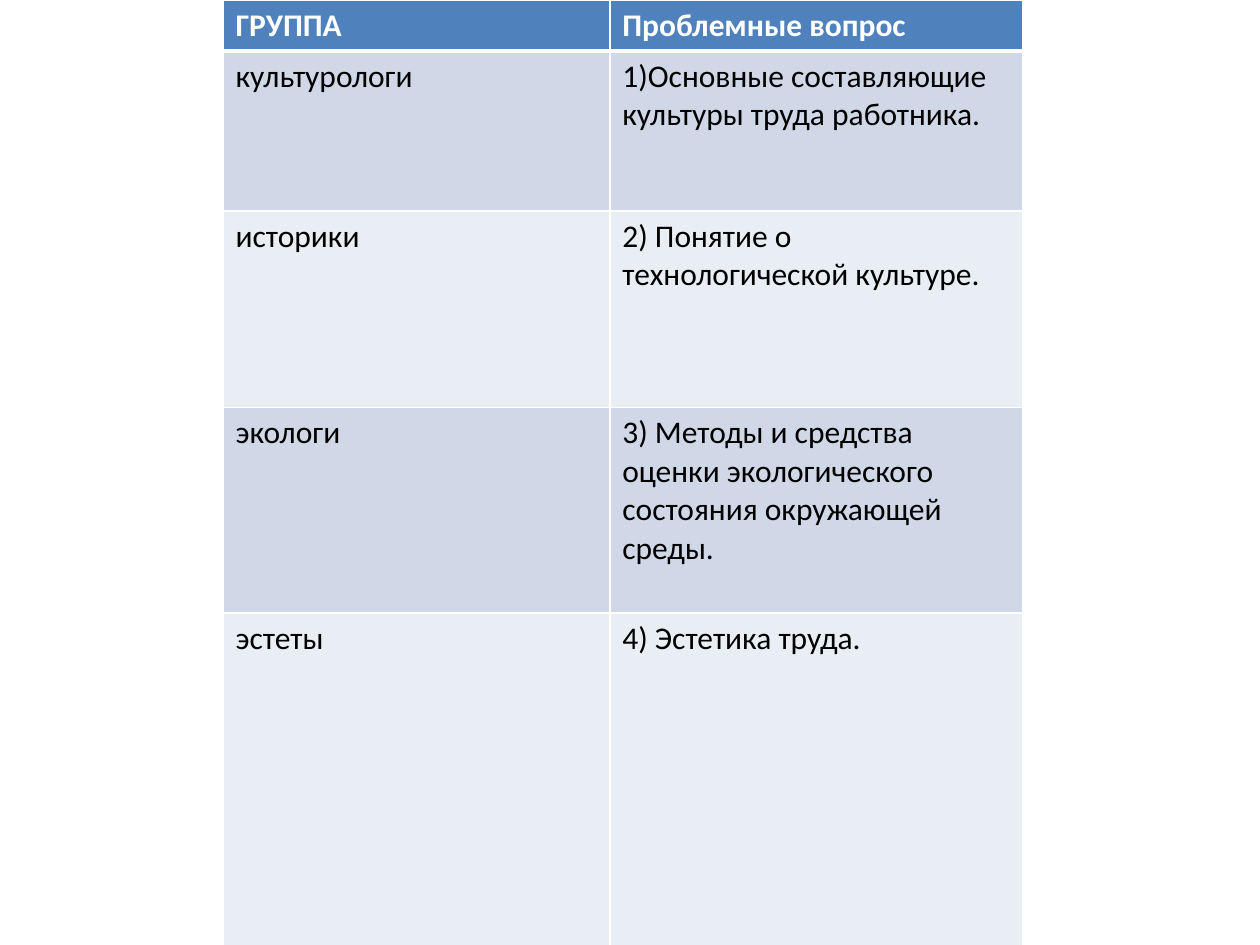
import pptx
import pptx.util
import pptx.dml.color
import pptx.oxml
import pptx.oxml.ns

ROWS = [
    ("ГРУППА", "Проблемные вопрос"),
    ("культурологи", "1)Основные составляющие культуры труда работника."),
    ("историки", "2) Понятие о технологической культуре."),
    ("экологи", "3) Методы и средства оценки экологического состояния "
                "окружающей среды."),
    ("эстеты", "4) Эстетика труда."),
]
WIDTHS = [3.07, 3.28]                      # grid columns
HEIGHTS = [0.39, 1.27, 1.56, 1.63, 2.64]   # grid rows


def color(code):
    return pptx.dml.color.RGBColor.from_string(code)


class Deck:
    """Style and current slide; the grid unit is a tenth of the width."""
    font, size = "Calibri", 18
    head, bands = "4F81BD", ("E9EDF4", "D0D8E8")
    light, dark = "FFFFFF", "000000"

    def __init__(self):
        self.file = pptx.Presentation()
        self.file.slide_width = pptx.util.Inches(10)
        self.file.slide_height = pptx.util.Inches(7.5)
        self.slide = self.file.slides.add_slide(self.file.slide_layouts[6])

    def grid(self, units):
        return int(self.file.slide_width * units / 10)

    def edge(self, cell, side, width):
        line = pptx.oxml.parse_xml(
            f'<a:ln{side} {pptx.oxml.ns.nsdecls("a")} '
            f'w="{pptx.util.Pt(width)}"><a:solidFill>'
            f'<a:srgbClr val="{self.light}"/></a:solidFill></a:ln{side}>')
        cell._tc.get_or_add_tcPr().append(line)

    def cell(self, cell, text, row):
        # Borders come before the fill; a thick rule closes the header
        for side in "LRTB":
            thick = (row, side) in ((0, "B"), (1, "T"))
            self.edge(cell, side, 3 if thick else 1)
        cell.fill.solid()
        cell.fill.fore_color.rgb = color(self.bands[row % 2] if row else self.head)
        cell.text = text
        font = cell.text_frame.paragraphs[0].font
        font.name, font.size = self.font, pptx.util.Pt(self.size)
        font.bold = row == 0
        font.color.rgb = color(self.dark if row else self.light)

    def table(self, left, top, widths, heights, rows):
        frame = self.slide.shapes.add_table(
            len(heights), len(widths), self.grid(left), self.grid(top),
            self.grid(sum(widths)), self.grid(sum(heights)))
        table = frame.table
        for col, width in zip(table.columns, widths):
            col.width = self.grid(width)
        for row, height in zip(table.rows, heights):
            row.height = self.grid(height)
        for r, texts in enumerate(rows):
            for c, text in enumerate(texts):
                self.cell(table.cell(r, c), text, r)


def main():
    deck = Deck()
    # Groups and their questions
    deck.table(1.77, 0, WIDTHS, HEIGHTS, ROWS)
    deck.file.save("out.pptx")


if __name__ == "__main__":
    main()
